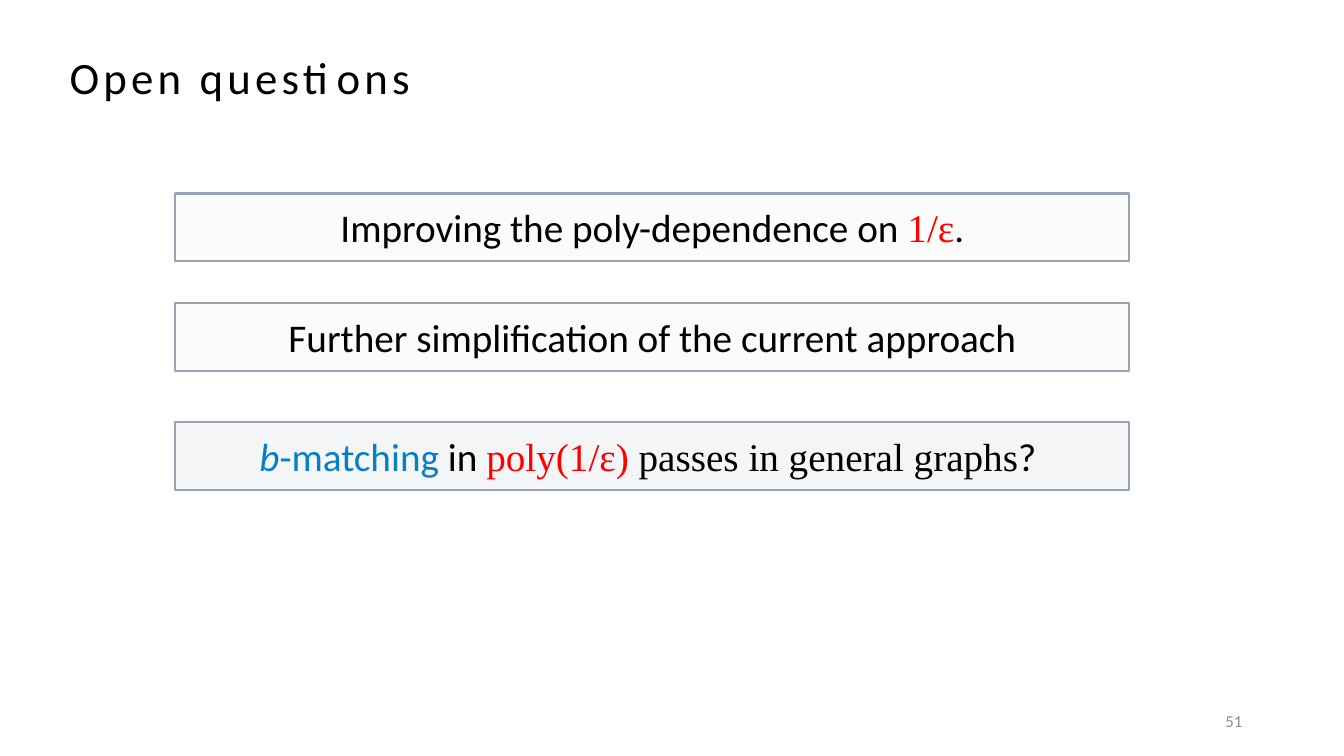
from lxml import etree
from pptx import Presentation
from pptx.dml.color import RGBColor
from pptx.enum import shapes, text
from pptx.oxml.ns import qn
from pptx.util import Inches, Pt


def color(value):
    return RGBColor.from_string(value)


def add_run(paragraph, content, size, font_color, font_name="Calibri", italic=False):
    run = paragraph.add_run()
    run.text = content
    run.font.size = Pt(size)
    run.font.name = font_name
    run.font.italic = italic
    run.font.color.rgb = color(font_color)
    return run


BLACK, RED, BLUE = "000000", "FF0000", "0680C3"
SERIF = "Times New Roman"

presentation = Presentation()
presentation.slide_width = Inches(13.33)
presentation.slide_height = Inches(7.5)
slide = presentation.slides.add_slide(presentation.slide_layouts[5])

# Title with wide letter spacing
title = slide.shapes.title
title.left, title.top = Inches(0.59), Inches(0.44)
title.width, title.height = Inches(3.66), Inches(0.64)
title.text_frame.word_wrap = False
title.text_frame.auto_size = text.MSO_AUTO_SIZE.NONE
title.text_frame.vertical_anchor = text.MSO_ANCHOR.TOP
paragraph = title.text_frame.paragraphs[0]
paragraph.alignment = text.PP_ALIGN.LEFT
title_run = add_run(paragraph, "Open questions", 32, BLACK)
title_run.font._element.set("spc", "300")

# Question boxes: top, fill opacity in percent, runs
questions = [
    (1.92, 12, [("Improving the poly-dependence on ", BLACK),
                ("1/ε", RED, SERIF),
                (".", BLACK)]),
    (3.01, 12, [("Further simplification of the current approach", BLACK)]),
    (4.19, 30, [("b", BLUE, "Calibri", True),
                ("-matching", BLUE),
                (" in ", BLACK),
                ("poly(1/ε)", RED, SERIF),
                (" passes in general graphs", BLACK, SERIF),
                ("? ", BLACK)]),
]
for top, opacity, runs in questions:
    box = slide.shapes.add_shape(shapes.MSO_SHAPE.RECTANGLE, Inches(1.74),
                                 Inches(top), Inches(9.46), Inches(0.67))
    box.shadow.inherit = False
    box.fill.solid()
    box.fill.fore_color.rgb = color("DCE1E6")
    fill_color = box.fill._xPr.find(qn("a:solidFill"))[0]
    etree.SubElement(fill_color, qn("a:alpha"), val=str(opacity * 1000))
    box.line.color.rgb = color("96A4B5")
    box.line.width = Pt(1.5)
    frame = box.text_frame
    frame.word_wrap = True
    frame.margin_left = frame.margin_right = Inches(0.1)
    frame.margin_top = frame.margin_bottom = Inches(0.1)
    frame.vertical_anchor = text.MSO_ANCHOR.TOP
    paragraph = frame.paragraphs[0]
    paragraph.alignment = text.PP_ALIGN.CENTER
    for content, *style in runs:
        add_run(paragraph, content, 28, *style)

# Slide number
number = slide.shapes.add_textbox(Inches(9.42), Inches(6.95), Inches(3), Inches(0.4))
number.text_frame.word_wrap = True
number.text_frame.vertical_anchor = text.MSO_ANCHOR.MIDDLE
paragraph = number.text_frame.paragraphs[0]
paragraph.alignment = text.PP_ALIGN.RIGHT
add_run(paragraph, "51", 12, "8C8C8C")

presentation.save("out.pptx")
